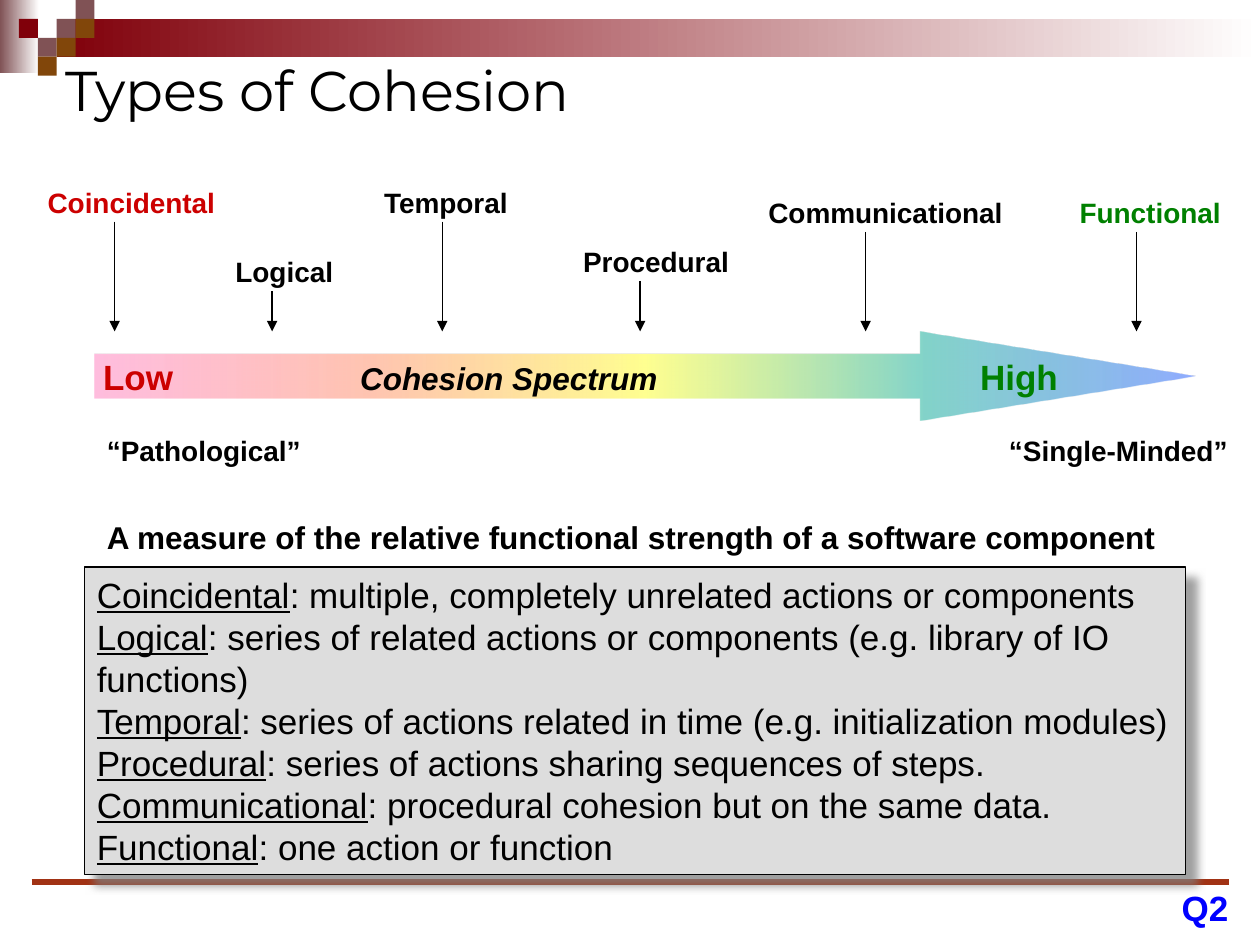
from lxml import etree
from pptx import Presentation
from pptx.dml.color import RGBColor
from pptx.enum import shapes, text
from pptx.oxml import ns
from pptx.util import Inches, Pt

BLACK = RGBColor(0x00, 0x00, 0x00)
WHITE = RGBColor(0xFF, 0xFF, 0xFF)
RED = RGBColor(0xCC, 0x00, 0x00)
GREEN = RGBColor(0x00, 0x80, 0x00)
BLUE = RGBColor(0x00, 0x00, 0xFF)
MAUVE = RGBColor(0x80, 0x52, 0x55)
MAROON = RGBColor(0x80, 0x00, 0x0A)
BROWN = RGBColor(0x81, 0x46, 0x0A)
RUST = RGBColor(0xA1, 0x32, 0x14)
GREY = RGBColor(0xDD, 0xDD, 0xDD)
SHADOW = RGBColor(0x80, 0x80, 0x80)
PINK = RGBColor(0xFF, 0x33, 0x99)
ORANGE = RGBColor(0xFF, 0x66, 0x33)
YELLOW = RGBColor(0xFF, 0xFF, 0x00)
TEAL = RGBColor(0x01, 0xA7, 0x8F)
AZURE = RGBColor(0x33, 0x66, 0xFF)


def write(paragraph, words, size=16, color=BLACK, bold=False, italic=False, underline=False, face="Arial"):
    run = paragraph.add_run()
    run.text = words
    font = run.font
    font.name, font.size, font.color.rgb = face, Pt(size), color
    font.bold, font.italic, font.underline = bold, italic, underline


def blend(shape, stops):
    shape.shadow.inherit = False
    shape.line.fill.background()
    shape.fill.gradient()
    shape.fill.gradient_angle = 0
    stop_list = shape._element.spPr.find(".//" + ns.qn("a:gsLst"))
    for old_stop in list(stop_list):
        stop_list.remove(old_stop)
    for position, color, opacity in stops:
        stop = etree.SubElement(stop_list, ns.qn("a:gs"), pos=str(position * 1000))
        tint = etree.SubElement(stop, ns.qn("a:srgbClr"), val=str(color))
        if opacity < 100:
            etree.SubElement(tint, ns.qn("a:alpha"), val=str(opacity * 1000))


deck = Presentation()
deck.slide_width, deck.slide_height = Inches(10), Inches(7.5)
canvas = deck.slides.add_slide(deck.slide_layouts[6]).shapes
RECTANGLE = shapes.MSO_SHAPE.RECTANGLE

for left, top, width, height, color in [(0, 0, 0.31, 0.58, MAUVE), (0.45, 0.15, 9.55, 0.3, MAROON)]:
    band = canvas.add_shape(RECTANGLE, Inches(left), Inches(top), Inches(width), Inches(height))
    blend(band, [(0, color, 100), (100, WHITE, 100)])

for column, row, color in [
    (3, 1, MAUVE), (4, 0, MAUVE), (4, 1, BROWN), (2, 2, MAUVE),
    (1, 1, MAROON), (3, 2, BROWN), (2, 3, BROWN),
]:
    tile = canvas.add_shape(
        RECTANGLE, Inches(0.15 * column), Inches(0.15 * row), Inches(0.15), Inches(0.15))
    tile.shadow.inherit = False
    tile.fill.solid()
    tile.fill.fore_color.rgb = color
    tile.line.fill.background()

spectrum = canvas.add_shape(
    shapes.MSO_SHAPE.RIGHT_ARROW, Inches(0.75), Inches(2.63), Inches(8.74), Inches(0.71))
spectrum.adjustments[0], spectrum.adjustments[1] = 0.5, 3.085
blend(spectrum, [
    (0, PINK, 32), (25, ORANGE, 38), (50, YELLOW, 43), (75, TEAL, 48), (100, AZURE, 54)])

for words, left, top, width, height, style in [
    ("Types of Cohesion", 0.42, 0.33, 9, 0.75, dict(size=32, face="Montserrat")),
    ("Low", 0.72, 2.79, 0.76, 0.4, dict(size=20, bold=True, color=RED)),
    ("Cohesion Spectrum", 2.76, 2.8, 2.56, 0.4, dict(size=18, bold=True, italic=True)),
    ("High", 7.68, 2.79, 0.82, 0.4, dict(size=20, bold=True, color=GREEN)),
    ("“Single-Minded”", 7.91, 3.39, 1.94, 0.37, dict(bold=True)),
    ("“Pathological”", 0.75, 3.39, 1.74, 0.37, dict(bold=True)),
    ("Coincidental", 0.28, 1.42, 1.53, 0.37, dict(bold=True, color=RED)),
    ("Logical", 1.77, 1.97, 0.98, 0.37, dict(bold=True)),
    ("Temporal", 2.95, 1.42, 1.2, 0.37, dict(bold=True)),
    ("Procedural", 4.53, 1.89, 1.36, 0.37, dict(bold=True)),
    ("Communicational", 6, 1.5, 2.07, 0.37, dict(bold=True)),
    ("Functional", 8.47, 1.5, 1.32, 0.37, dict(bold=True, color=GREEN)),
    ("A measure of the relative functional strength of a software component",
     0.75, 4.06, 8.53, 0.4, dict(size=18, bold=True)),
    ("Q2", 9.28, 7.03, 0.57, 0.34, dict(size=20, bold=True, color=BLUE)),
]:
    label = canvas.add_textbox(Inches(left), Inches(top), Inches(width), Inches(height)).text_frame
    label.word_wrap = width == 9
    label.vertical_anchor = text.MSO_ANCHOR.MIDDLE
    write(label.paragraphs[0], words, **style)

for start_x, start_y, end_x, end_y, color, weight in [
    (0.25, 7, 9.75, 7, RUST, 3),
    (0.91, 1.76, 0.91, 2.63, BLACK, 0.75),
    (2.16, 2.31, 2.16, 2.63, BLACK, 0.75),
    (3.51, 1.76, 3.51, 2.63, BLACK, 0.75),
    (5.08, 2.23, 5.08, 2.63, BLACK, 0.75),
    (6.87, 1.84, 6.87, 2.63, BLACK, 0.75),
    (9.02, 1.84, 9.02, 2.63, BLACK, 0.75),
]:
    pointer = canvas.add_connector(
        shapes.MSO_CONNECTOR.STRAIGHT, Inches(start_x), Inches(start_y), Inches(end_x), Inches(end_y))
    pointer.line.color.rgb = color
    pointer.line.width = Pt(weight)
    if start_x == end_x:
        etree.SubElement(pointer.line._get_or_add_ln(), ns.qn("a:tailEnd"), type="triangle")
    etree.SubElement(pointer._element.spPr, ns.qn("a:effectLst"))

panel = canvas.add_shape(RECTANGLE, Inches(0.67), Inches(4.5), Inches(8.74), Inches(2.44))
panel.fill.solid()
panel.fill.fore_color.rgb = GREY
panel.line.color.rgb = BLACK
panel.line.width = Pt(0.75)
panel.shadow.inherit = False
shade = etree.SubElement(
    panel._element.spPr.find(ns.qn("a:effectLst")), ns.qn("a:outerShdw"),
    blurRad=str(Pt(5)), dist=str(Pt(8.5)), dir="2700000", algn="tl", rotWithShape="0")
shade_color = etree.SubElement(shade, ns.qn("a:srgbClr"), val=str(SHADOW))
etree.SubElement(shade_color, ns.qn("a:alpha"), val="75000")

glossary = panel.text_frame
glossary.word_wrap = True
glossary.vertical_anchor = text.MSO_ANCHOR.TOP
for index, (term, meaning) in enumerate([
    ("Coincidental", "multiple, completely unrelated actions or components"),
    ("Logical", "series of related actions or components (e.g. library of IO functions)"),
    ("Temporal", "series of actions related in time (e.g. initialization modules)"),
    ("Procedural", "series of actions sharing sequences of steps."),
    ("Communicational", "procedural cohesion but on the same data."),
    ("Functional", "one action or function"),
]):
    entry = glossary.add_paragraph() if index else glossary.paragraphs[0]
    entry.alignment = text.PP_ALIGN.LEFT
    write(entry, term, size=20, underline=True)
    write(entry, f": {meaning}", size=20)

deck.save("out.pptx")
